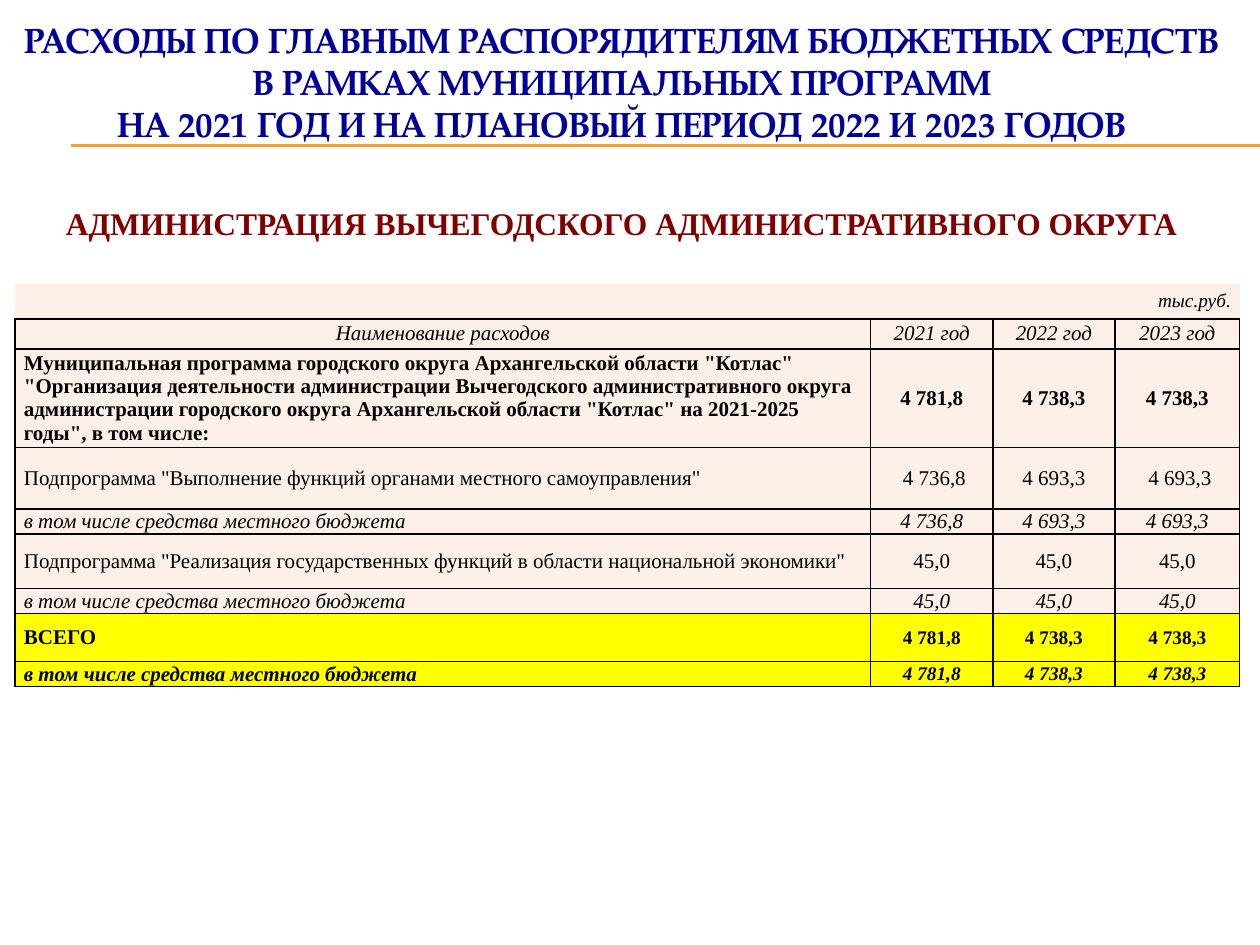
from lxml.etree import SubElement
from pptx import Presentation
from pptx.dml.color import RGBColor
from pptx.enum.shapes import MSO_CONNECTOR
from pptx.enum.text import MSO_ANCHOR, PP_ALIGN
from pptx.oxml.ns import qn
from pptx.util import Inches, Pt

HEADING = ("РАСХОДЫ ПО ГЛАВНЫМ РАСПОРЯДИТЕЛЯМ БЮДЖЕТНЫХ СРЕДСТВ "
           "В РАМКАХ МУНИЦИПАЛЬНЫХ ПРОГРАММ\v"
           "НА 2021 ГОД И НА ПЛАНОВЫЙ ПЕРИОД 2022 И 2023 ГОДОВ")
DEPARTMENT = "АДМИНИСТРАЦИЯ ВЫЧЕГОДСКОГО АДМИНИСТРАТИВНОГО ОКРУГА"
PROGRAM = ('Муниципальная программа городского округа Архангельской области "Котлас" '
           '"Организация деятельности администрации Вычегодского административного округа '
           'администрации городского округа Архангельской области "Котлас" '
           'на 2021-2025 годы", в том числе:')
SELF_GOVERNMENT = 'Подпрограмма "Выполнение функций органами местного самоуправления"'
ECONOMY = 'Подпрограмма "Реализация государственных функций в области национальной экономики"'
LOCAL = "в том числе средства местного бюджета"

SERIF, DISPLAY = "Times New Roman", "TeX Gyre Pagella"
BLACK, NAVY, MAROON, GOLD = "000000", "000099", "800000", "F0A22E"
CREAM, YELLOW = "FCF0E8", "FFFF00"
LEFT, CENTER, RIGHT, JUSTIFY = PP_ALIGN.LEFT, PP_ALIGN.CENTER, PP_ALIGN.RIGHT, PP_ALIGN.JUSTIFY

COLUMNS = [6.79, 0.97, 0.97, 0.99]
# height, fill, bold, italic, size of figures, alignment of name, alignment of figures, texts
ROWS = [
    (0.18, CREAM, False, True, 11, LEFT, RIGHT, ["", "", "", "тыс.руб."]),
    (0.24, CREAM, False, True, 12, CENTER, CENTER,
     ["Наименование расходов", "2021 год", "2022 год", "2023 год"]),
    (0.78, CREAM, True, False, 12, LEFT, CENTER, [PROGRAM, "4 781,8", "4 738,3", "4 738,3"]),
    (0.49, CREAM, False, False, 12, JUSTIFY, CENTER,
     [SELF_GOVERNMENT, " 4 736,8", "4 693,3", " 4 693,3"]),
    (0.2, CREAM, False, True, 12, JUSTIFY, CENTER, [LOCAL, "4 736,8", "4 693,3", "4 693,3"]),
    (0.43, CREAM, False, False, 12, JUSTIFY, CENTER, [ECONOMY, "45,0", "45,0", "45,0"]),
    (0.2, CREAM, False, True, 12, JUSTIFY, CENTER, [LOCAL, "45,0", "45,0", "45,0"]),
    (0.38, YELLOW, True, False, 11, JUSTIFY, CENTER, ["ВСЕГО", "4 781,8", "4 738,3", "4 738,3"]),
    (0.2, YELLOW, True, True, 11, JUSTIFY, CENTER, [LOCAL, "4 781,8", "4 738,3", "4 738,3"]),
]


def rgb(value):
    return RGBColor.from_string(value)


def add_run(paragraph, text, font, size, color, bold=False, italic=False):
    for index, line in enumerate(text.split("\v")):
        if index:
            paragraph.add_line_break()
        run = paragraph.add_run()
        run.text = line
        run.font.name, run.font.size = font, Pt(size)
        run.font.bold, run.font.italic = bold, italic
        run.font.color.rgb = rgb(color)


def set_borders(cell, drawn_sides):
    """Draw the given sides in black and clear the others."""
    properties = cell._tc.get_or_add_tcPr()
    for side in "LRTB":
        line = SubElement(properties, qn(f"a:ln{side}"), w=str(Pt(1)))
        if side in drawn_sides:
            fill = SubElement(line, qn("a:solidFill"))
            SubElement(fill, qn("a:srgbClr"), val=BLACK)
        else:
            SubElement(line, qn("a:noFill"))


def add_rules(slide):
    for y in (1.15, 1.16):
        rule = slide.shapes.add_connector(
            MSO_CONNECTOR.STRAIGHT, Inches(0.56), Inches(y), Inches(10), Inches(y))
        rule.line.color.rgb = rgb(GOLD)
        rule.line.width = Pt(0.75)
        SubElement(rule._element.spPr, qn("a:effectLst"))


def fill_title(title):
    title.left, title.top = Inches(0.04), Inches(0.21)
    title.width, title.height = Inches(9.79), Inches(1.65)
    frame = title.text_frame
    frame.word_wrap = True
    frame.vertical_anchor = MSO_ANCHOR.MIDDLE
    heading, department = frame.paragraphs[0], frame.add_paragraph()
    add_run(heading, HEADING, DISPLAY, 20, NAVY, bold=True)
    add_run(department, DEPARTMENT, SERIF, 18, MAROON, bold=True)
    for paragraph, gap in ((heading, 0), (department, 34)):
        paragraph.alignment = CENTER
        paragraph.line_spacing = 1.0
        paragraph.space_before = Pt(gap)


def add_expenses(slide):
    table = slide.shapes.add_table(
        len(ROWS), len(COLUMNS), Inches(0.12), Inches(2.25),
        Inches(sum(COLUMNS)), Inches(sum(row[0] for row in ROWS))).table
    table.first_row = table.horz_banding = False
    for column, width in zip(table.columns, COLUMNS):
        column.width = Inches(width)
    for r, (height, fill, bold, italic, size, name_align, figure_align, texts) in enumerate(ROWS):
        table.rows[r].height = Inches(height)
        for c, text in enumerate(texts):
            cell = table.cell(r, c)
            cell.margin_left = cell.margin_right = Inches(0.07)
            cell.margin_top = cell.margin_bottom = 0
            cell.vertical_anchor = MSO_ANCHOR.MIDDLE
            set_borders(cell, "LRTB" if r else "B")
            cell.fill.solid()
            cell.fill.fore_color.rgb = rgb(fill)
            paragraph = cell.text_frame.paragraphs[0]
            paragraph.alignment = figure_align if c else name_align
            text_size = size if c or r == 0 else 12
            add_run(paragraph, text, SERIF, text_size, BLACK, bold, italic)


def main():
    deck = Presentation()
    deck.slide_width, deck.slide_height = Inches(10), Inches(7.5)
    slide = deck.slides.add_slide(deck.slide_layouts[5])
    add_rules(slide)
    fill_title(slide.shapes.title)
    add_expenses(slide)
    deck.save("out.pptx")


if __name__ == "__main__":
    main()
